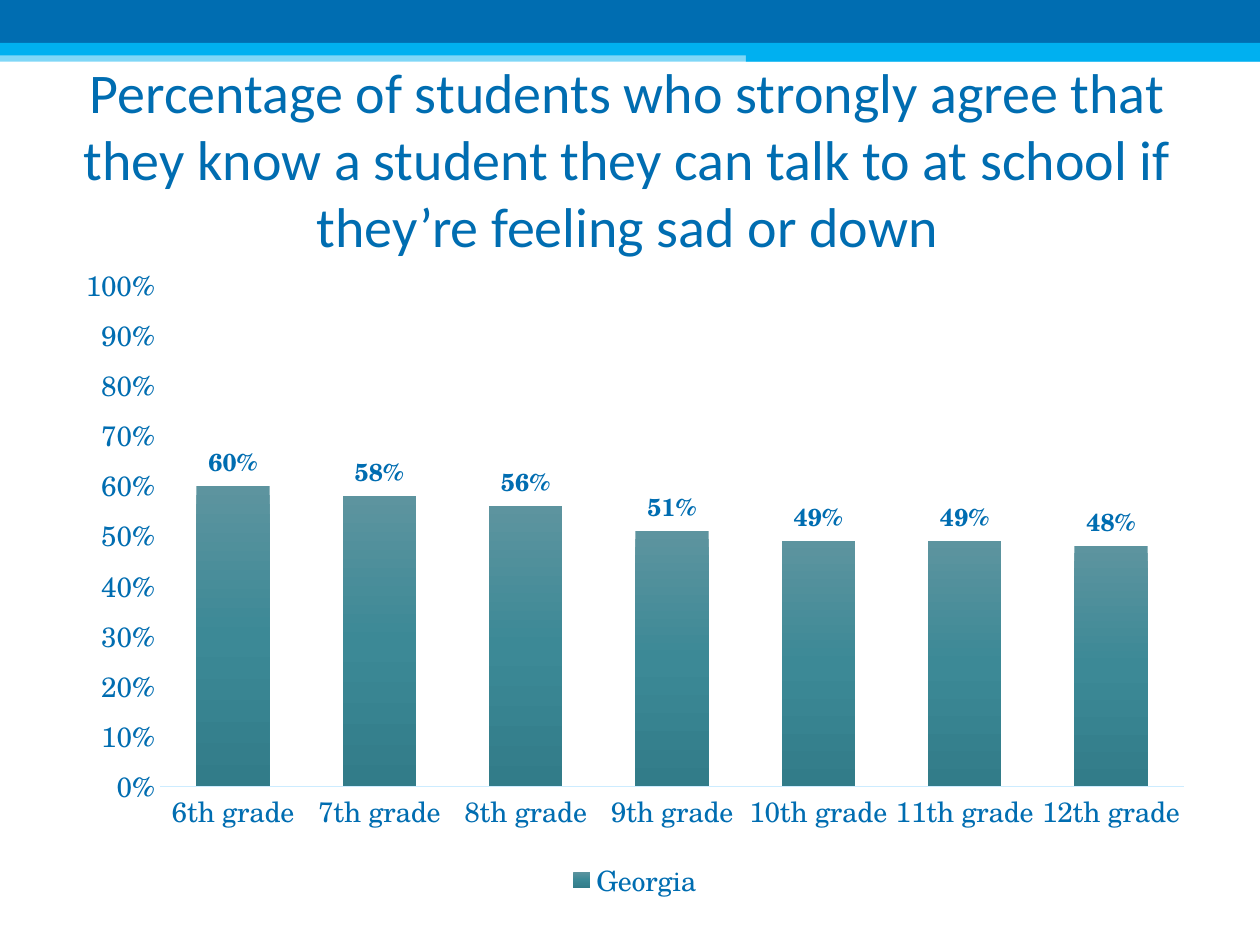
from lxml import etree
from pptx import Presentation
from pptx.chart.data import CategoryChartData
from pptx.dml.color import RGBColor
from pptx.enum import chart as ch, shapes, text
from pptx.oxml import parse_xml
from pptx.oxml.ns import nsdecls, qn
from pptx.util import Inches, Pt

BLUE = RGBColor(0x00, 0x6D, 0xB1)
SKY = RGBColor(0x00, 0xB0, 0xF0)
PALE = RGBColor(0xCD, 0xEC, 0xFF)
WHITE = RGBColor(0xFF, 0xFF, 0xFF)
TITLE_FONT, CHART_FONT = "Calibri", "TeX Gyre Schola"

# Content
TITLE = ("Percentage of students who strongly agree that they know a student "
         "they can talk to at school if they’re feeling sad or down")
SERIES = "Georgia"
VALUES = {6: 0.6, 7: 0.58, 8: 0.56, 9: 0.51, 10: 0.49, 11: 0.49, 12: 0.48}
BAR_GRADIENT = [(0, "5D949F"), (50, "3C8996"), (100, "327C89")]
RECT = shapes.MSO_SHAPE.RECTANGLE
ROUND = shapes.MSO_SHAPE.ROUNDED_RECTANGLE
# Header bands: shape, left, top, width, height, colour, opacity in percent
BANDS = [
    (RECT, 0, 0.4, 10, 0.09, SKY, 50),
    (RECT, 0, 0, 10, 0.34, BLUE, 100),
    (RECT, 0, 0.34, 10, 0.1, SKY, 100),
    (RECT, 5.92, 0.39, 4.08, 0.1, SKY, 100),
    (ROUND, 5.91, 0.54, 3.35, 0.03, WHITE, 100),
    (ROUND, 8.06, 0.64, 1.75, 0.04, WHITE, 100),
]


def style_font(font, size, name=CHART_FONT, bold=False):
    font.size, font.name, font.bold = Pt(size), name, bold
    font.color.rgb = BLUE


def add_band(slide, kind, left, top, width, height, color, opacity):
    band = slide.shapes.add_shape(kind, *map(Inches, (left, top, width, height)))
    band.shadow.inherit = False
    band.fill.solid()
    band.fill.fore_color.rgb = color
    band.line.fill.background()
    if opacity < 100:
        srgb = band.fill._xPr.find(".//" + qn("a:srgbClr"))
        etree.SubElement(srgb, qn("a:alpha"), val=str(opacity * 1000))


def add_title(slide):
    title = slide.shapes.title
    title.left, title.top = Inches(0.48), Inches(0.67)
    title.width, title.height = Inches(9), Inches(1.17)
    frame = title.text_frame
    frame.text = TITLE
    frame.word_wrap = True
    frame.auto_size = text.MSO_AUTO_SIZE.NONE
    frame.vertical_anchor = text.MSO_ANCHOR.MIDDLE
    paragraph = frame.paragraphs[0]
    paragraph.alignment = text.PP_ALIGN.CENTER
    style_font(paragraph.runs[0].font, 32, TITLE_FONT)
    # Keep the title in front of the bands
    slide.shapes._spTree.append(title._element)


def add_bar_chart(slide):
    data = CategoryChartData(number_format="0%")
    data.categories = [f"{grade}th grade" for grade in VALUES]
    data.add_series(SERIES, list(VALUES.values()))
    chart = slide.shapes.add_chart(
        ch.XL_CHART_TYPE.COLUMN_CLUSTERED,
        Inches(0.5), Inches(2), Inches(9.08), Inches(5.19), data).chart
    chart.has_title = False
    style_font(chart.font, 16)

    # Legend
    chart.has_legend = True
    chart.legend.position = ch.XL_LEGEND_POSITION.BOTTOM
    chart.legend.include_in_layout = False
    style_font(chart.legend.font, 16)

    # Axes
    for axis in (chart.category_axis, chart.value_axis):
        axis.has_major_gridlines = False
        axis.major_tick_mark = axis.minor_tick_mark = ch.XL_TICK_MARK.NONE
        style_font(axis.tick_labels.font, 16)
    chart.category_axis.format.line.color.rgb = PALE
    chart.category_axis.format.line.width = Pt(0.75)
    value_axis = chart.value_axis
    value_axis.format.line.fill.background()
    value_axis.minimum_scale, value_axis.maximum_scale = 0, 1
    value_axis.major_unit = 0.1
    value_axis.tick_labels.number_format = "0%"
    value_axis.tick_labels.number_format_is_linked = False

    # Bars
    plot = chart.plots[0]
    plot.gap_width, plot.overlap = 100, -24
    plot.vary_by_categories = False
    stops = "".join(f'<a:gs pos="{pos * 1000}"><a:srgbClr val="{color}"/></a:gs>'
                    for pos, color in BAR_GRADIENT)
    properties = plot.series[0]._element.get_or_add_spPr()
    properties.insert(0, parse_xml(
        f'<a:gradFill {nsdecls("a")} rotWithShape="1"><a:gsLst>{stops}</a:gsLst>'
        '<a:lin ang="5400000" scaled="0"/></a:gradFill>'))

    # Value labels
    labels = plot.series[0].data_labels
    labels.show_value = True
    labels.position = ch.XL_LABEL_POSITION.OUTSIDE_END
    labels.number_format = "0%"
    labels.number_format_is_linked = False
    style_font(labels.font, 14, bold=True)


def main():
    presentation = Presentation()
    presentation.slide_width, presentation.slide_height = Inches(10), Inches(7.5)
    slide = presentation.slides.add_slide(presentation.slide_layouts[5])
    for band in BANDS:
        add_band(slide, *band)
    add_title(slide)
    add_bar_chart(slide)
    presentation.save("out.pptx")


if __name__ == "__main__":
    main()
